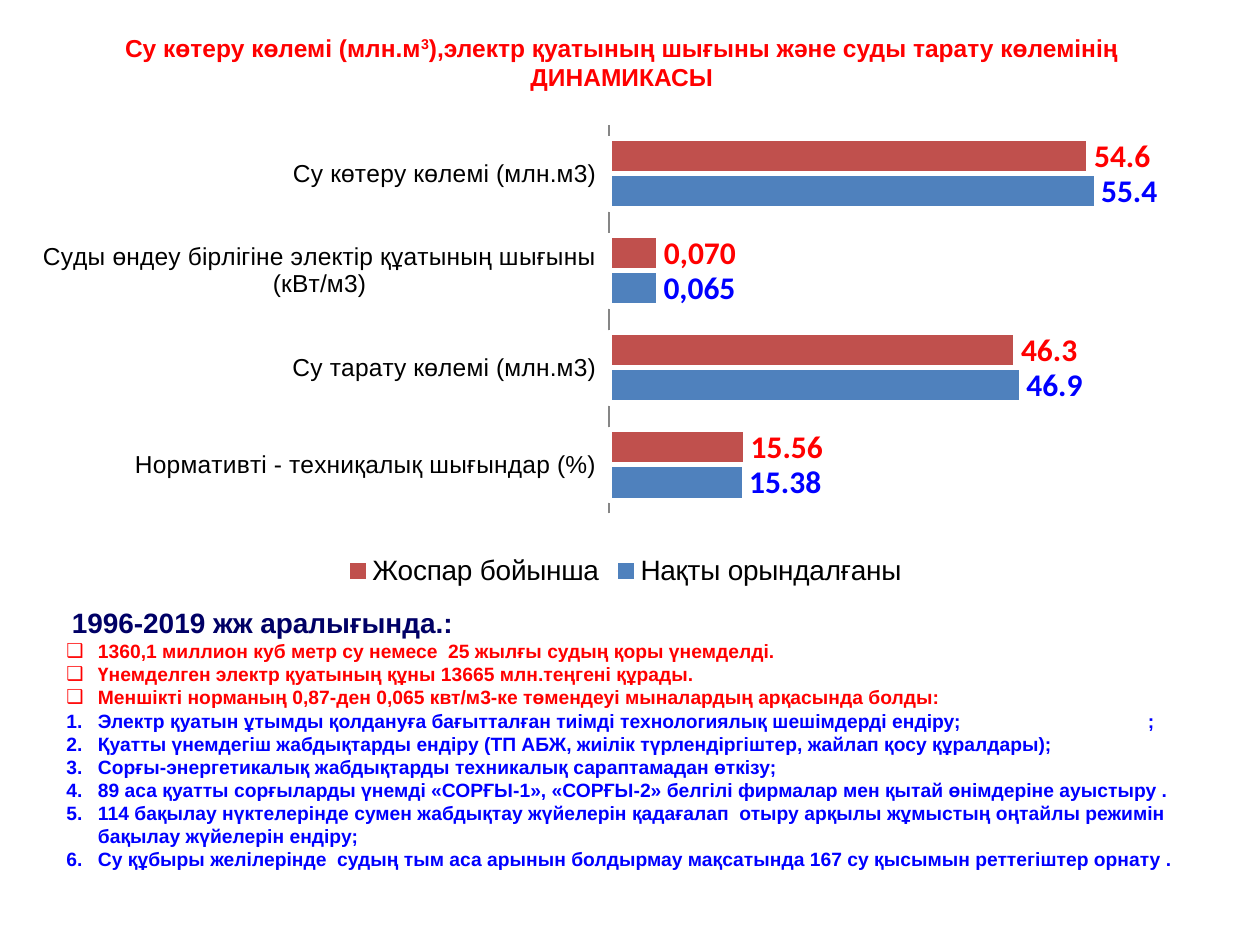
from lxml.etree import SubElement
from pptx import Presentation
from pptx.chart.data import CategoryChartData
from pptx.dml.color import RGBColor
from pptx.enum.chart import XL_CHART_TYPE as ChartType, XL_LABEL_POSITION as LabelPosition
from pptx.enum.chart import XL_LEGEND_POSITION as LegendPosition, XL_TICK_LABEL_POSITION as TickLabels
from pptx.enum.chart import XL_TICK_MARK as TickMark
from pptx.enum.text import MSO_ANCHOR as Anchor, MSO_AUTO_SIZE as AutoSize, PP_ALIGN as Align
from pptx.oxml import parse_xml
from pptx.oxml.ns import nsdecls, qn
from pptx.util import Cm, Pt

RED = RGBColor(0xFF, 0x00, 0x00)
BLUE = RGBColor(0x00, 0x00, 0xFF)
NAVY = RGBColor(0x00, 0x00, 0x66)
BLACK = RGBColor(0x00, 0x00, 0x00)
WHITE = RGBColor(0xFF, 0xFF, 0xFF)
GRAY = RGBColor(0x86, 0x86, 0x86)
BAR_BLUE = RGBColor(0x4F, 0x81, 0xBD)
BAR_RED = RGBColor(0xC0, 0x50, 0x4D)

TITLE = [
    [("Су көтеру көлемі (млн.м", False), ("3", True),
     ("),электр қуатының шығыны және суды тарату көлемінің ", False)],
    [("ДИНАМИКАСЫ ", False)],
]
CATEGORIES = [
    "Нормативті - техниқалық шығындар (%)",
    "Су тарату көлемі (млн.м3)",
    "Суды өндеу бірлігіне электір құатының шығыны (кВт/м3)",
    "Су көтеру көлемі (млн.м3)",
]
ENERGY = 2
SERIES = [
    ("Нақты орындалғаны", (15.38, 46.9, 5.65, 55.4), "0,065", BAR_BLUE, BLUE),
    ("Жоспар бойынша", (15.56, 46.3, 5.7, 54.6), "0,070", BAR_RED, RED),
]
PLOT_AREA = {"x": 0.486, "y": 0.04, "w": 0.447, "h": 0.799}
PERIOD = "1996-2019 жж аралығында.:"
RESULTS = [
    "1360,1 миллион куб метр су немесе  25 жылғы судың қоры үнемделді.",
    "Үнемделген электр қуатының құны 13665 млн.теңгені құрады.",
    "Меншікті норманың 0,87-ден 0,065 квт/м3-ке төмендеуі мыналардың арқасында болды:",
]
MEASURES = [
    "Электр қуатын ұтымды қолдануға бағытталған тиімді технологиялық шешімдерді ендіру;\t;",
    "Қуатты үнемдегіш жабдықтарды ендіру (ТП АБЖ, жиілік түрлендіргіштер, жайлап қосу құралдары);",
    "Сорғы-энергетикалық жабдықтарды техникалық сараптамадан өткізу;",
    "89 аса қуатты сорғыларды үнемді «СОРҒЫ-1», «СОРҒЫ-2» белгілі фирмалар мен қытай өнімдеріне ауыстыру .",
    "114 бақылау нүктелерінде сумен жабдықтау жүйелерін қадағалап  отыру арқылы жұмыстың оңтайлы режимін "
    "бақылау жүйелерін ендіру;",
    "Су құбыры желілерінде  судың тым аса арынын болдырмау мақсатында 167 су қысымын реттегіштер орнату .",
]


def style(font, size, color, bold=False, name="Arial"):
    font.name, font.size, font.bold = name, Pt(size), bold
    font.color.rgb = color


def place(shape, left, top, width, height):
    shape.left, shape.top, shape.width, shape.height = Cm(left), Cm(top), Cm(width), Cm(height)


def next_paragraph(frame, index):
    return frame.add_paragraph() if index else frame.paragraphs[0]


def add_title(page):
    title = page.shapes.title
    place(title, 1.9, 0.53, 21.41, 1.45)
    frame = title.text_frame
    frame.word_wrap, frame.auto_size = True, AutoSize.NONE
    frame.vertical_anchor = Anchor.TOP
    for index, line in enumerate(TITLE):
        para = next_paragraph(frame, index)
        para.alignment, para.space_before = Align.CENTER, Pt(0)
        for text, raised in line:
            span = para.add_run()
            span.text = text
            style(span.font, 14, RED, True)
            if raised:
                span.font._element.set("baseline", "30000")


def set_plot_area(chart):
    plot_area = chart._chartSpace.chart.plotArea
    for old in plot_area.findall(qn("c:layout")):
        plot_area.remove(old)
    layout = parse_xml(f"<c:layout {nsdecls('c')}><c:manualLayout/></c:layout>")
    settings = {"layoutTarget": "inner", "xMode": "edge", "yMode": "edge", **PLOT_AREA}
    for tag, value in settings.items():
        SubElement(layout[0], qn(f"c:{tag}")).set("val", str(value))
    plot_area.insert(0, layout)


def add_bars(page):
    data = CategoryChartData()
    data.categories = CATEGORIES
    for name, values, *_ in SERIES:
        data.add_series(name, values)
    chart = page.shapes.add_chart(
        ChartType.BAR_CLUSTERED, Cm(0.71), Cm(2.13), Cm(23.8), Cm(9.8), data).chart
    style(chart.font, 18, BLACK, name="Calibri")
    chart.has_title = False
    chart.has_legend = True
    chart.legend.position = LegendPosition.BOTTOM
    chart.legend.include_in_layout = False
    style(chart.legend.font, 16, BLACK)

    names = chart.category_axis
    names.major_tick_mark = names.minor_tick_mark = TickMark.NONE
    names.tick_label_position = TickLabels.LOW
    names.format.line.color.rgb = GRAY
    style(names.tick_labels.font, 14, BLACK)
    scale = chart.value_axis
    scale.visible = scale.has_major_gridlines = False
    scale.minimum_scale, scale.maximum_scale = 0, 60

    plot = chart.plots[0]
    plot.gap_width, plot.overlap, plot.vary_by_categories = 75, 0, False
    for series, (_, _, energy_label, fill, ink) in zip(plot.series, SERIES):
        series.format.fill.solid()
        series.format.fill.fore_color.rgb = fill
        series.format.line.color.rgb = WHITE
        series.format.line.width = Pt(3)
        labels = series.data_labels
        labels.show_value = True
        labels.position = LabelPosition.OUTSIDE_END
        style(labels.font, 18, ink, True, "Calibri")
        label = series.points[ENERGY].data_label
        label.text_frame.text = energy_label
        label.position = LabelPosition.OUTSIDE_END
        style(label.text_frame.paragraphs[0].runs[0].font, 18, ink, True, "Calibri")
    set_plot_area(chart)


def add_list_item(frame, text, color, bullet_tag, **bullet):
    para = frame.add_paragraph()
    para.text = text
    style(para.runs[0].font, 11, color, True)
    settings = para._p.get_or_add_pPr()
    settings.set("marL", str(Cm(0.635)))
    settings.set("indent", str(-Cm(0.635)))
    SubElement(settings, qn("a:buFont")).set("typeface", "Arial")
    mark = SubElement(settings, qn(bullet_tag))
    for key, value in bullet.items():
        mark.set(key, value)
    if "\t" in text:
        stops = SubElement(settings, qn("a:tabLst"))
        SubElement(stops, qn("a:tab"), pos=str(Cm(21.8)), algn="l")


def add_notes_box(page):
    box = page.shapes.add_textbox(Cm(1.09), Cm(12.09), Cm(23.39), Cm(5.64))
    frame = box.text_frame
    frame.word_wrap = True
    for text, size in ((" ", 11), (PERIOD, 16)):
        span = frame.paragraphs[0].add_run()
        span.text = text
        style(span.font, size, NAVY, True)
    for text in RESULTS:
        add_list_item(frame, text, RED, "a:buChar", char="❑")
    for text in MEASURES:
        add_list_item(frame, text, BLUE, "a:buAutoNum", type="arabicPeriod")


def main():
    deck = Presentation()
    deck.slide_width, deck.slide_height = Cm(25.4), Cm(19.05)
    page = deck.slides.add_slide(deck.slide_layouts[5])
    add_title(page)
    add_bars(page)
    add_notes_box(page)
    deck.save("out.pptx")


if __name__ == "__main__":
    main()
